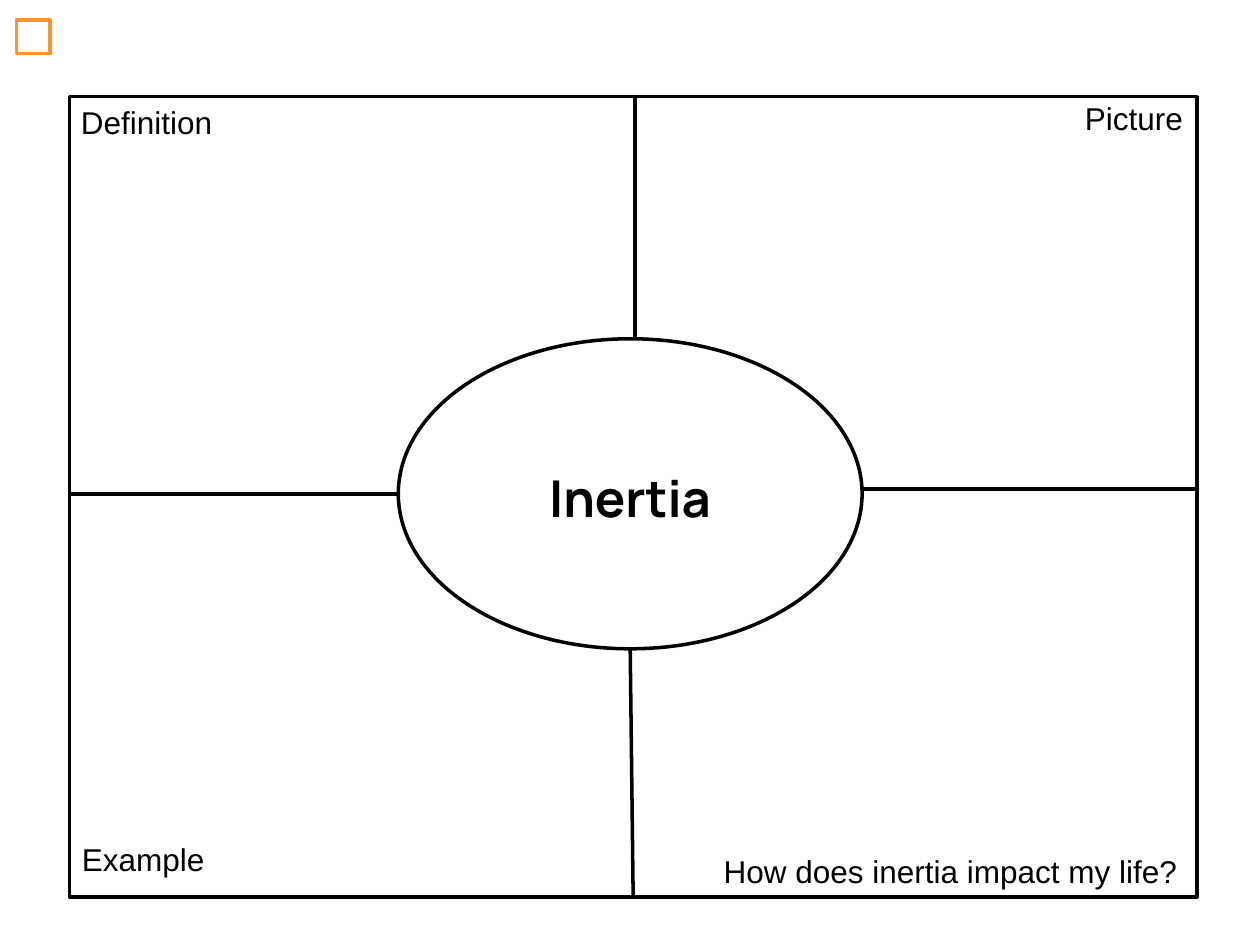
from dataclasses import dataclass

from lxml import etree
from pptx import Presentation
from pptx.dml.color import RGBColor
from pptx.enum import shapes, text
from pptx.oxml import ns
from pptx.util import Cm, Pt


@dataclass(frozen=True)
class Theme:
    ink: str = "000000"
    accent: str = "FF932B"
    paper: str = "FFFFFF"
    body: str = "Arial"
    head: str = "Manrope"
    small: int = 18
    large: int = 29
    rule: int = 2


THEME = Theme()
LEFT, MID, RIGHT = text.PP_ALIGN.LEFT, text.PP_ALIGN.CENTER, text.PP_ALIGN.RIGHT
RECT, OVAL = shapes.MSO_SHAPE.RECTANGLE, shapes.MSO_SHAPE.OVAL


def stroke(item, hue):
    item.line.color.rgb = RGBColor.from_string(hue)
    item.line.width = Pt(THEME.rule)


def add_form(slide, kind, box, hue):
    form = slide.shapes.add_shape(kind, *map(Cm, box))
    form.shadow.inherit = False
    form.fill.solid()
    form.fill.fore_color.rgb = RGBColor.from_string(THEME.paper)
    stroke(form, hue)
    return form


def add_spoke(slide, start, end):
    spoke = slide.shapes.add_connector(
        shapes.MSO_CONNECTOR.STRAIGHT, *map(Cm, start + end))
    stroke(spoke, THEME.ink)
    etree.SubElement(spoke.element.spPr, ns.qn("a:effectLst"))
    return spoke


def add_label(slide, box, words, size, font, align=LEFT, bold=False):
    label = slide.shapes.add_textbox(*map(Cm, box))
    frame = label.text_frame
    frame.word_wrap = True
    frame.auto_size = text.MSO_AUTO_SIZE.SHAPE_TO_FIT_TEXT
    para = frame.paragraphs[0]
    para.alignment = align
    run = para.add_run()
    run.text = words
    run.font.size = Pt(size)
    run.font.name = font
    run.font.bold = bold
    run.font.color.rgb = RGBColor.from_string(THEME.ink)


def draw_model(slide, box):
    x, y, w, h = box
    left, top, ow, oh = x + 6.63, y + 4.88, 9.35, 6.25
    cx, cy = left + ow / 2, top + oh / 2
    shift = 0.1

    frame = add_form(slide, RECT, box, THEME.ink)
    add_spoke(slide, (cx + shift, y), (cx + shift, top))
    add_spoke(slide, (x, cy), (left, cy))
    add_spoke(slide, (x + w, cy - shift), (left + ow, cy - shift))
    foot = add_spoke(slide, (x + w / 2, y + h), (cx, top + oh))
    foot.begin_connect(frame, 2)
    add_form(slide, OVAL, (left, top, ow, oh), THEME.ink)


def draw_labels(slide, box):
    x, y = box[:2]
    add_label(slide, (x + 6.91, y + 7.33, 8.79, 1.5), "Inertia",
              THEME.large, THEME.head, MID, True)
    labels = [
        ("Definition", -0.02, 0, 3.18, LEFT),
        ("Example", 0, 14.86, 3, LEFT),
        ("Picture", 20.22, -0.07, 2.51, LEFT),
        ("How does inertia impact my life?", 11.18, 15.11, 11.4, RIGHT),
    ]
    for words, dx, dy, w, align in labels:
        add_label(slide, (x + dx, y + dy, w, 1.02), words,
                  THEME.small, THEME.body, align)


def main():
    deck = Presentation()
    deck.slide_width, deck.slide_height = Cm(25.4), Cm(19.05)
    slide = deck.slides.add_slide(deck.slide_layouts[6])
    board = (1.4, 1.95, 22.73, 16.13)
    draw_model(slide, board)
    draw_labels(slide, board)
    add_form(slide, RECT, (0.33, 0.4, 0.68, 0.68), THEME.accent)
    deck.save("out.pptx")


if __name__ == "__main__":
    main()
